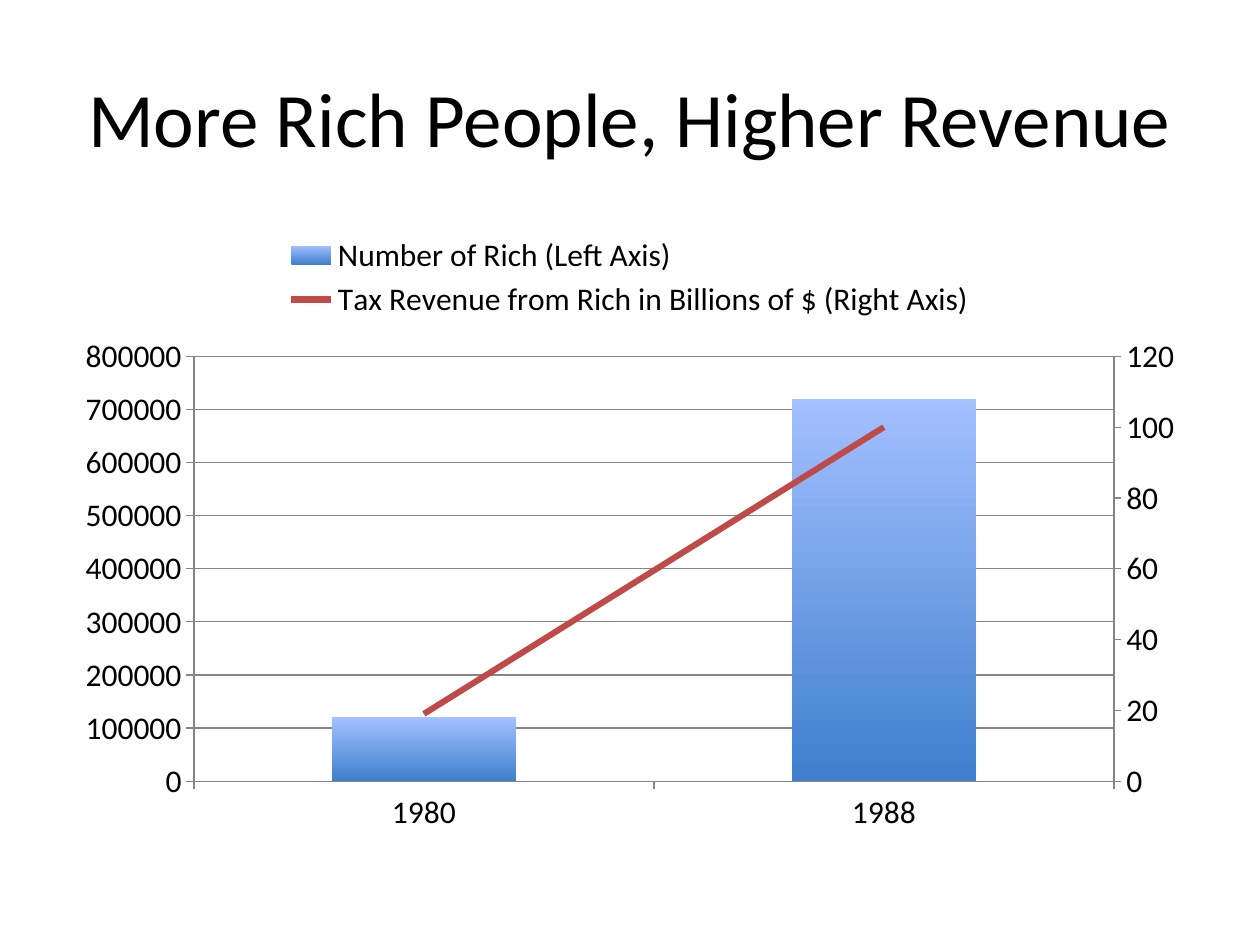
from copy import deepcopy
from dataclasses import dataclass

from lxml.etree import SubElement
from pptx import Presentation
from pptx.chart.data import CategoryChartData
from pptx.dml.color import RGBColor
from pptx.enum.chart import XL_CHART_TYPE, XL_LEGEND_POSITION, XL_MARKER_STYLE, XL_TICK_MARK
from pptx.enum.text import MSO_ANCHOR, PP_ALIGN
from pptx.oxml.ns import qn
from pptx.util import Inches, Pt


@dataclass(frozen=True)
class Theme:
    font: str = "Calibri"
    head: int = 44
    body: int = 18
    ink: str = "000000"
    rule: str = "868686"
    top: str = "A3C0FF"
    base: str = "3F7FCD"
    trend: str = "BE4B48"


class Deck:
    def __init__(self, theme):
        self.theme = theme
        self.file = Presentation()
        self.file.slide_width = Inches(10)
        self.file.slide_height = Inches(7.5)
        self.slide = self.file.slides.add_slide(self.file.slide_layouts[5])

    def style(self, font, size):
        font.name = self.theme.font
        font.size = Pt(size)
        font.color.rgb = RGBColor.from_string(self.theme.ink)

    def stroke(self, line, color, width):
        line.color.rgb = RGBColor.from_string(color)
        line.width = Pt(width)

    def title(self, text, left, top, width, height):
        shape = self.slide.shapes.title
        shape.left, shape.top = Inches(left), Inches(top)
        shape.width, shape.height = Inches(width), Inches(height)
        frame = shape.text_frame
        frame.text = text
        frame.vertical_anchor = MSO_ANCHOR.MIDDLE
        frame.paragraphs[0].alignment = PP_ALIGN.CENTER
        self.style(frame.paragraphs[0].runs[0].font, self.theme.head)

    def combo(self, years, bars, trend, left, top, width, height):
        data = CategoryChartData()
        data.categories = years
        for name, values in (bars, trend):
            data.add_series(name, values)
        chart = self.slide.shapes.add_chart(
            XL_CHART_TYPE.COLUMN_CLUSTERED, Inches(left), Inches(top),
            Inches(width), Inches(height), data).chart
        self.style(chart.font, self.theme.body)
        chart.has_title = False
        chart.has_legend = True
        chart.legend.position = XL_LEGEND_POSITION.TOP
        chart.legend.include_in_layout = False
        for axis in (chart.category_axis, chart.value_axis):
            axis.major_tick_mark = XL_TICK_MARK.OUTSIDE
            axis.minor_tick_mark = XL_TICK_MARK.NONE
            self.stroke(axis.format.line, self.theme.rule, 0.75)
        chart.value_axis.has_major_gridlines = True
        self.stroke(chart.value_axis.major_gridlines.format.line, self.theme.rule, 0.75)
        self.split(chart)
        column, line = chart.plots
        column.gap_width = 150
        column.vary_by_categories = False
        fill = column.series[0].format.fill
        fill.gradient()
        fill.gradient_angle = 90
        for stop, color in zip(fill.gradient_stops, (self.theme.base, self.theme.top)):
            stop.color.rgb = RGBColor.from_string(color)
        series = line.series[0]
        series.smooth = False
        series.marker.style = XL_MARKER_STYLE.NONE
        self.stroke(series.format.line, self.theme.trend, 3.5)

    def split(self, chart):
        area = chart.element.xpath("c:chart/c:plotArea")[0]
        column = area.xpath("c:barChart")[0]
        series = column.xpath("c:ser")[1]
        for flag in series.xpath("c:invertIfNegative"):
            series.remove(flag)
        line = SubElement(area, qn("c:lineChart"))
        column.addnext(line)
        SubElement(line, qn("c:grouping")).set("val", "standard")
        SubElement(line, qn("c:varyColors")).set("val", "0")
        line.append(series)
        SubElement(line, qn("c:marker")).set("val", "1")
        last = area.xpath("c:valAx")[0]
        pairs = (("catAx", "1001", "1002", "b", "autoZero", "1"),
                 ("valAx", "1002", "1001", "r", "max", "0"))
        for tag, own, other, side, cross, hide in pairs:
            SubElement(line, qn("c:axId")).set("val", own)
            axis = deepcopy(area.xpath(f"c:{tag}")[0])
            for grid in axis.xpath("c:majorGridlines"):
                axis.remove(grid)
            marks = {"axId": own, "crossAx": other, "axPos": side,
                     "crosses": cross, "delete": hide}
            for name, value in marks.items():
                axis.xpath(f"c:{name}")[0].set("val", value)
            last.addnext(axis)
            last = axis


def main():
    deck = Deck(Theme())
    deck.title("More Rich People, Higher Revenue", 0.5, 0.3, 9, 1.25)
    deck.combo(
        ("1980", "1988"),
        ("Number of Rich (Left Axis)", (120000, 720000)),
        ("Tax Revenue from Rich in Billions of $ (Right Axis)", (19, 100)),
        0.5, 1.75, 9, 4.95)
    deck.file.save("out.pptx")


if __name__ == "__main__":
    main()
